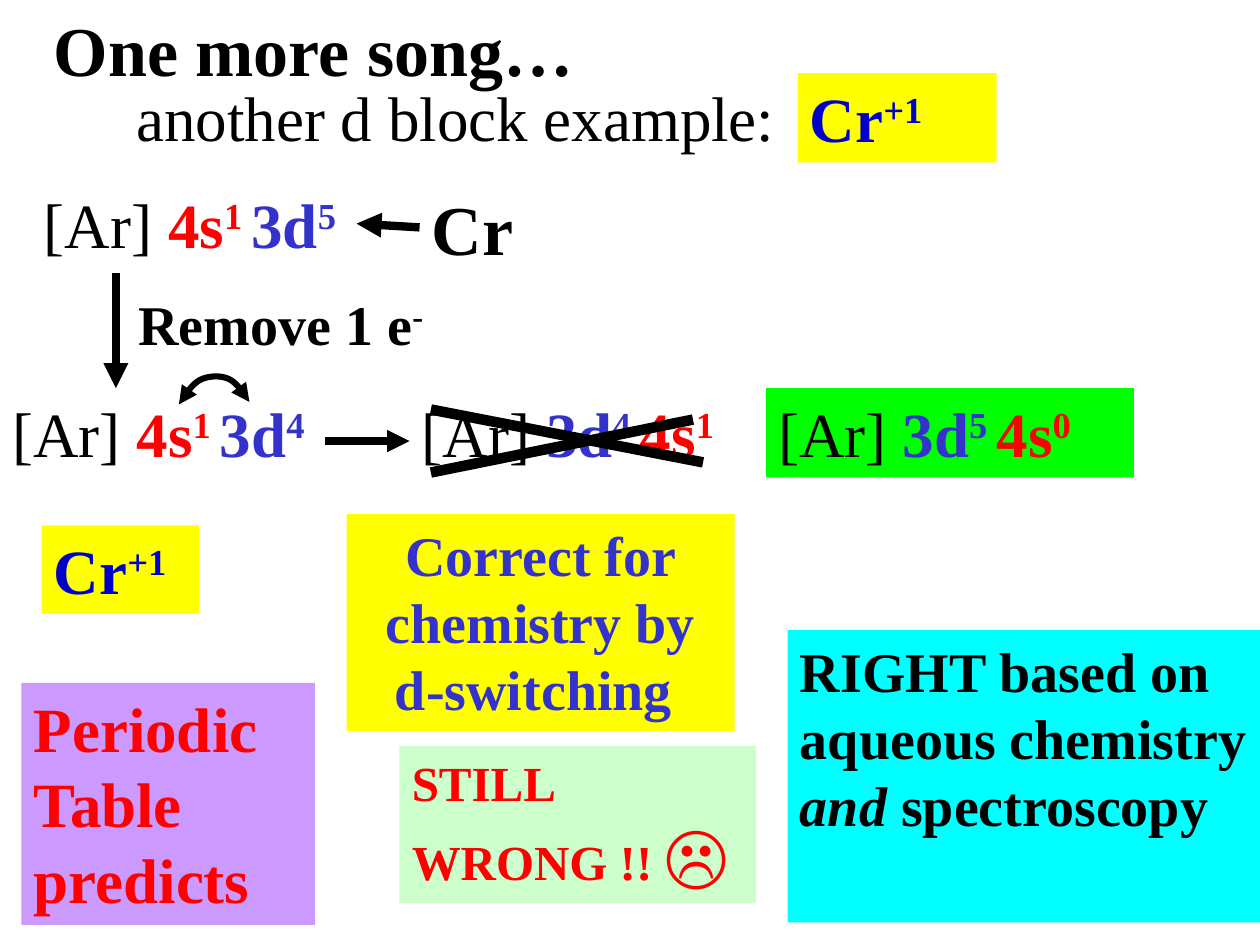
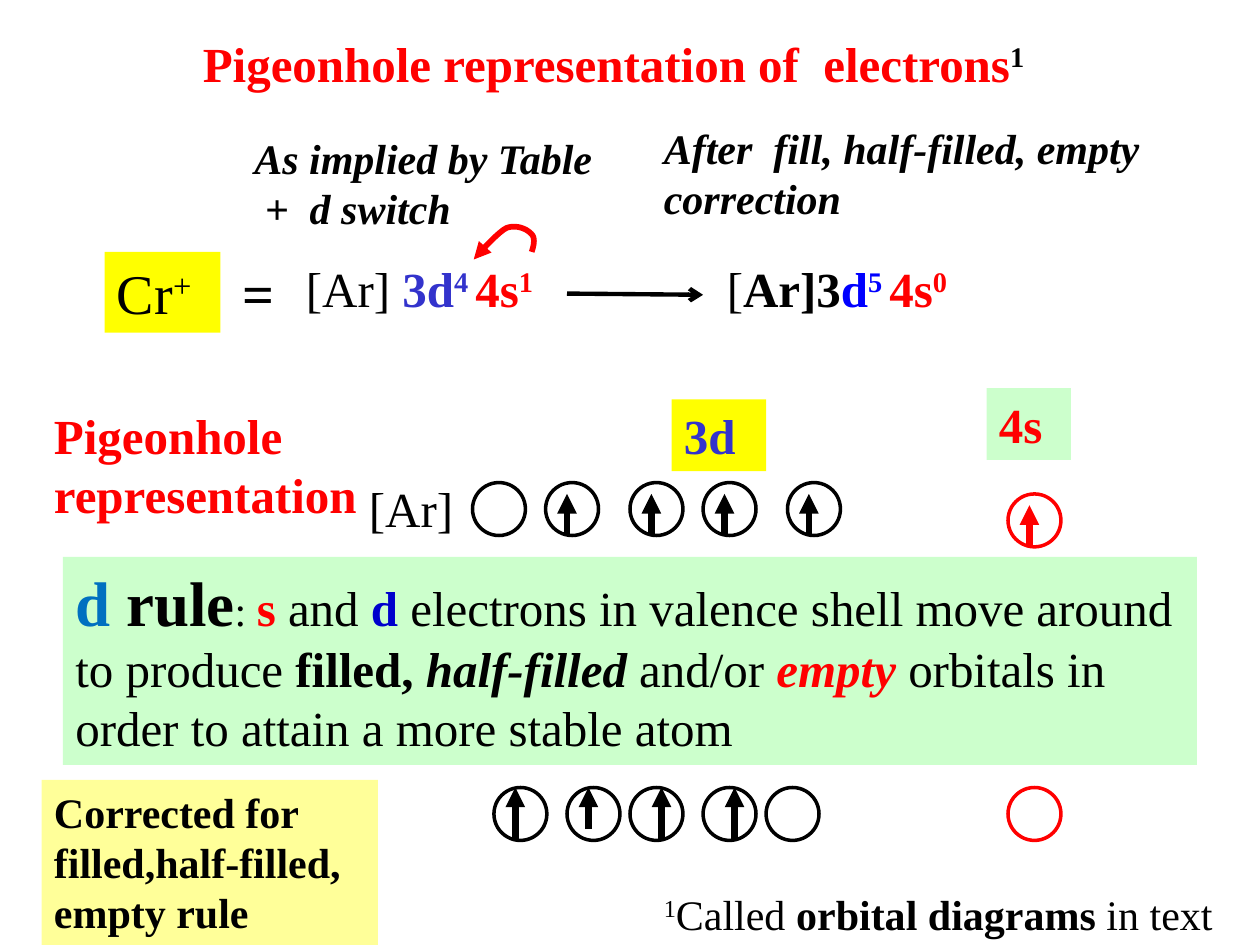
from dataclasses import dataclass
from typing import Any

from lxml.etree import SubElement
from pptx import Presentation
from pptx.dml.color import RGBColor
from pptx.enum.shapes import MSO_CONNECTOR as Connector
from pptx.enum.shapes import MSO_SHAPE as Shape
from pptx.enum.text import MSO_ANCHOR as Anchor
from pptx.enum.text import MSO_AUTO_SIZE as AutoSize
from pptx.enum.text import PP_ALIGN as Align
from pptx.oxml.ns import qn
from pptx.util import Inches, Pt

FONT = "Times New Roman"
COLORS = {
    "black": "000000", "red": "FF0000", "indigo": "3333CC", "navy": "0000CC",
    "blue": "0000FF", "sky": "0070C0", "yellow": "FFFF00", "cream": "FFFF99",
    "mint": "CCFFCC", "green": "00FF00", "cyan": "00FFFF", "violet": "CC99FF",
}
TITLE_ONLY = 5
ORBITAL_SIZE = 0.42


def rgb(name):
    return RGBColor.from_string(COLORS[name])


def add_runs(paragraph, runs, default_size):
    """Add (text, colour, style, size) runs; style letters: b bold, i italic, ^ superscript."""
    for text, color, style, *size in runs:
        run = paragraph.add_run()
        run.text = text
        font = run.font
        font.name = FONT
        font.size = Pt(size[0] if size else default_size)
        font.color.rgb = rgb(color)
        font.bold = "b" in style
        font.italic = "i" in style
        if "^" in style:
            font._element.set("baseline", "30000")


def style_line(shape, color, width, head=None, tail=None):
    shape.line.color.rgb = rgb(color)
    shape.line.width = Pt(width)
    outline = shape._element.spPr.find(qn("a:ln"))
    for tag, kind in (("a:headEnd", head), ("a:tailEnd", tail)):
        if kind:
            SubElement(outline, qn(tag), type=kind)


def bezier_points(start, curves, steps=12):
    """Sample a chain of cubic curves, each given by two handles and an end point."""
    points = [start]
    for first, second, end in curves:
        for step in range(1, steps + 1):
            t = step / steps
            u = 1 - t
            points.append(tuple(
                u**3 * a + 3 * u * u * t * b + 3 * u * t * t * c + t**3 * d
                for a, b, c, d in zip(start, first, second, end)))
        start = end
    return points


@dataclass
class Area:
    """Part of a slide whose contents are placed from its left top corner."""
    slide: Any
    left: float
    top: float

    def point(self, x, y):
        return Inches(self.left + x), Inches(self.top + y)

    def text(self, box, paragraphs, size, fill=None, align=Align.LEFT):
        x, y, width, height = box
        shape = self.slide.shapes.add_textbox(
            *self.point(x, y), Inches(width), Inches(height))
        if fill:
            shape.fill.solid()
            shape.fill.fore_color.rgb = rgb(fill)
        frame = shape.text_frame
        frame.word_wrap = True
        for index, runs in enumerate(paragraphs):
            paragraph = frame.add_paragraph() if index else frame.paragraphs[0]
            paragraph.alignment = align
            add_runs(paragraph, runs, size)
        return shape

    def line(self, start, end, width, color="black", tail=None):
        connector = self.slide.shapes.add_connector(
            Connector.STRAIGHT, *self.point(*start), *self.point(*end))
        style_line(connector, color, width, tail=tail)
        SubElement(connector._element.spPr, qn("a:effectLst"))
        return connector

    def curve(self, start, curves, width, color="black", head=None):
        points = [self.point(*p) for p in bezier_points(start, curves)]
        builder = self.slide.shapes.build_freeform(*points[0])
        builder.add_line_segments(points[1:], close=False)
        shape = builder.convert_to_shape()
        shape.shadow.inherit = False
        shape.fill.background()
        style_line(shape, color, width, head, "triangle")

    def orbital(self, x, electron=None, color="black"):
        """Draw a circle; electron gives the arrow's x, foot and tip inside it."""
        circle = self.slide.shapes.add_shape(
            Shape.OVAL, *self.point(x, 0), Inches(ORBITAL_SIZE), Inches(ORBITAL_SIZE))
        circle.shadow.inherit = False
        circle.fill.background()
        style_line(circle, color, 2)
        if electron:
            offset, foot, tip = electron
            self.line((x + offset, foot), (x + offset, tip), 3.75, color, "triangle")


def set_title(slide, box, runs, size, align):
    title = slide.shapes.title
    title.left, title.top, title.width, title.height = map(Inches, box)
    frame = title.text_frame
    frame.word_wrap = True
    frame.auto_size = AutoSize.NONE
    frame.vertical_anchor = Anchor.MIDDLE
    frame.paragraphs[0].alignment = align
    add_runs(frame.paragraphs[0], runs, size)


def configuration(*subshells):
    """Runs for [Ar] followed by (subshell, electron count) pairs."""
    runs = [("[Ar] ", "black", "")]
    for index, (subshell, count) in enumerate(subshells):
        color = "red" if subshell == "4s" else "indigo"
        gap = " " if index < len(subshells) - 1 else ""
        runs += [(subshell, color, "b"), (f"{count}{gap}", color, "b^")]
    return [runs]


def chromium_ion():
    return [[("Cr", "navy", "b"), ("+1", "navy", "b^")]]


def bold(text, color="black"):
    return [[(text, color, "b")]]


def add_song_heading(slide, left, top):
    set_title(slide, (left + 0.5, top + 0.25, 5.67, 1.25),
              [(" ", "black", "", 44), ("another d block example:", "black", "")],
              36, Align.LEFT)
    area = Area(slide, left, top)
    area.text((0, 0, 5.17, 0.77), bold("One more song…"), 40)
    area.text((6, 0.58, 1.58, 0.71), chromium_ion(), 36, "yellow")


def add_electron_removal(slide, left, top):
    area = Area(slide, left, top)
    atom = area.text((0, 0, 2.58, 0.71), configuration(("4s", 1), ("3d", 5)), 36)
    name = area.text((3.08, 0, 1.25, 0.77), bold("Cr"), 40)
    pointer = area.line((3.08, 0.38), (2.58, 0.35), 4.75, tail="triangle")
    pointer.begin_connect(name, 1)
    pointer.end_connect(atom, 3)
    area.line((0.67, 0.75), (0.67, 1.66), 4.75, tail="triangle")
    area.text((0.75, 0.83, 2.75, 0.64),
              [[("Remove 1 e", "black", "b"), ("-", "black", "b^")]], 32)


def add_ion_steps(slide, left, top):
    area = Area(slide, left, top)
    area.text((0, 0, 2.58, 0.71), configuration(("4s", 1), ("3d", 4)), 36)
    area.curve((1.42, 0.13), [((1.48, 0.04), (1.53, -0.04), (1.6, -0.07)),
                              ((1.67, -0.1), (1.76, -0.1), (1.82, -0.07)),
                              ((1.89, -0.04), (1.98, 0.11), (1.98, 0.11))],
               3.5, head="triangle")
    area.line((2.58, 0.42), (3.25, 0.42), 4.25, tail="triangle")
    area.text((3.25, 0, 2.58, 0.71), configuration(("3d", 4), ("4s", 1)), 36)
    area.line((5.5, 0.25), (3.42, 0.67), 6)
    area.line((3.42, 0.17), (5.58, 0.59), 6)
    area.text((6.08, 0, 2.92, 0.71), configuration(("3d", 5), ("4s", 0)), 36, "green")


def add_verdicts(slide, left, top):
    area = Area(slide, left, top)
    area.text((0.16, 0.09, 1.25, 0.7), chromium_ion(), 36, "yellow")
    area.text((0, 1.34, 2.33, 1.92), bold("Periodic Table predicts", "red"), 36, "violet")
    area.text((2.58, 0, 3.08, 1.72),
              bold("Correct for chemistry by d-switching ", "indigo"),
              32, "yellow", Align.CENTER)
    area.text((3, 1.84, 2.83, 1.25),
              [[("STILL WRONG !! ", "red", "b"), ("☹", "red", "b", 40)]], 28, "mint")
    area.text((6.08, 0.92, 3.75, 2.32),
              [[("RIGHT based on aqueous chemistry ", "black", "b"),
                ("and ", "black", "bi"), ("spectroscopy", "black", "b")]], 32, "cyan")


def add_correction(slide, left, top):
    area = Area(slide, left, top)
    area.text((0, 1.08, 0.92, 0.64), [[("Cr", "black", ""), ("+", "black", "^")]],
              32, "yellow")
    area.text((1, 1.08, 0.42, 0.64), bold("="), 32)
    area.text((1.09, 0.08, 3.08, 0.91), [[("As implied by Table", "black", "bi")],
                                         [(" +  d switch", "black", "bi")]], 24)
    area.text((1.5, 1.08, 2.08, 0.57), configuration(("3d", 4), ("4s", 1)), 28)
    area.curve((3.39, 1.08), [((3.41, 1.02), (3.42, 0.96), (3.38, 0.93)),
                              ((3.35, 0.9), (3.27, 0.86), (3.19, 0.89)),
                              ((3.11, 0.93), (2.93, 1.14), (2.93, 1.14))], 3.25, "red")
    area.line((3.67, 1.41), (4.75, 1.42), 2.5, tail="arrow")
    area.text((4.34, 0, 4.25, 0.91),
              [[("After  fill, half-filled, empty correction", "black", "bi")]], 24)
    area.text((4.84, 1.08, 2.08, 0.57),
              [[("[", "black", ""), ("Ar]3", "black", "b"), ("d", "blue", "b"),
                ("5 ", "blue", "b^"), ("4s", "red", "b"), ("0", "red", "b^")]], 28)


def add_implied_orbitals(slide, left, top):
    labels = Area(slide, left, top)
    labels.text((0, 0.09, 2.75, 1.55), bold("Pigeonhole representation", "red"), 28)
    labels.text((2.5, 0.67, 0.92, 0.57), [[("[Ar]", "black", "")]], 28)
    labels.text((5, 0.09, 0.75, 0.57), bold("3d", "indigo"), 28, "yellow")
    labels.text((7.5, 0, 0.67, 0.57), bold("4s", "red"), 28, "mint")
    electron = (0.17, 0.42, 0.09)
    d_row = Area(slide, left, top + 0.75)
    d_row.orbital(3.42)
    for x in (4, 4.67, 5.25, 5.92):
        d_row.orbital(x, electron)
    Area(slide, left, top + 0.84).orbital(7.67, electron, "red")


def add_d_rule(slide, left, top):
    Area(slide, left, top).text((0, 0, 9, 1.65), [[
        ("d", "sky", "b", 36), (" rule", "black", "b", 36), (": ", "black", "", 24),
        ("s", "red", "b"), (" and ", "black", ""), ("d", "navy", "b"),
        (" electrons in valence shell move around to produce ", "black", ""),
        ("filled, ", "black", "b"), ("half-filled", "black", "bi"),
        (" and/or ", "black", ""), ("empty ", "red", "bi"),
        ("orbitals in order to attain a more stable atom", "black", "")]], 28, "mint")


def add_corrected_orbitals(slide, left, top):
    Area(slide, left, top).text(
        (0, 0, 2.67, 1.31), bold("Corrected for filled,half-filled, empty rule"),
        24, "cream")
    row = Area(slide, left, top + 0.06)
    for x, offset, foot in ((3.59, 0.17, 0.42), (4.17, 0.17, 0.33),
                            (4.67, 0.25, 0.42), (5.25, 0.25, 0.42)):
        row.orbital(x, (offset, foot, 0))
    row.orbital(5.75)
    row.orbital(7.67, color="red")


def add_footnote(slide, left, top):
    Area(slide, left, top).text((0, 0, 4.83, 0.5), [[
        ("1", "black", "^"), ("Called ", "black", ""),
        ("orbital diagrams ", "black", "b"), ("in text", "black", "")]], 24)


def build_song_slide(slide):
    add_song_heading(slide, 0.33, 0)
    add_electron_removal(slide, 0.25, 1.42)
    add_ion_steps(slide, 0, 3.08)
    add_verdicts(slide, 0.17, 4.08)


def build_pigeonhole_slide(slide):
    set_title(slide, (0.67, 0, 8.4, 1),
              [("Pigeonhole representation of  electrons", "red", "b"),
               ("1", "black", "b^")], 28, Align.CENTER)
    add_correction(slide, 0.83, 0.92)
    add_implied_orbitals(slide, 0.33, 3.08)
    add_d_rule(slide, 0.5, 4.42)
    add_corrected_orbitals(slide, 0.33, 6.19)
    add_footnote(slide, 5.17, 7)


def main():
    presentation = Presentation()
    presentation.slide_width, presentation.slide_height = Inches(10), Inches(7.5)
    for build in (build_song_slide, build_pigeonhole_slide):
        build(presentation.slides.add_slide(presentation.slide_layouts[TITLE_ONLY]))
    presentation.save("out.pptx")


if __name__ == "__main__":
    main()
